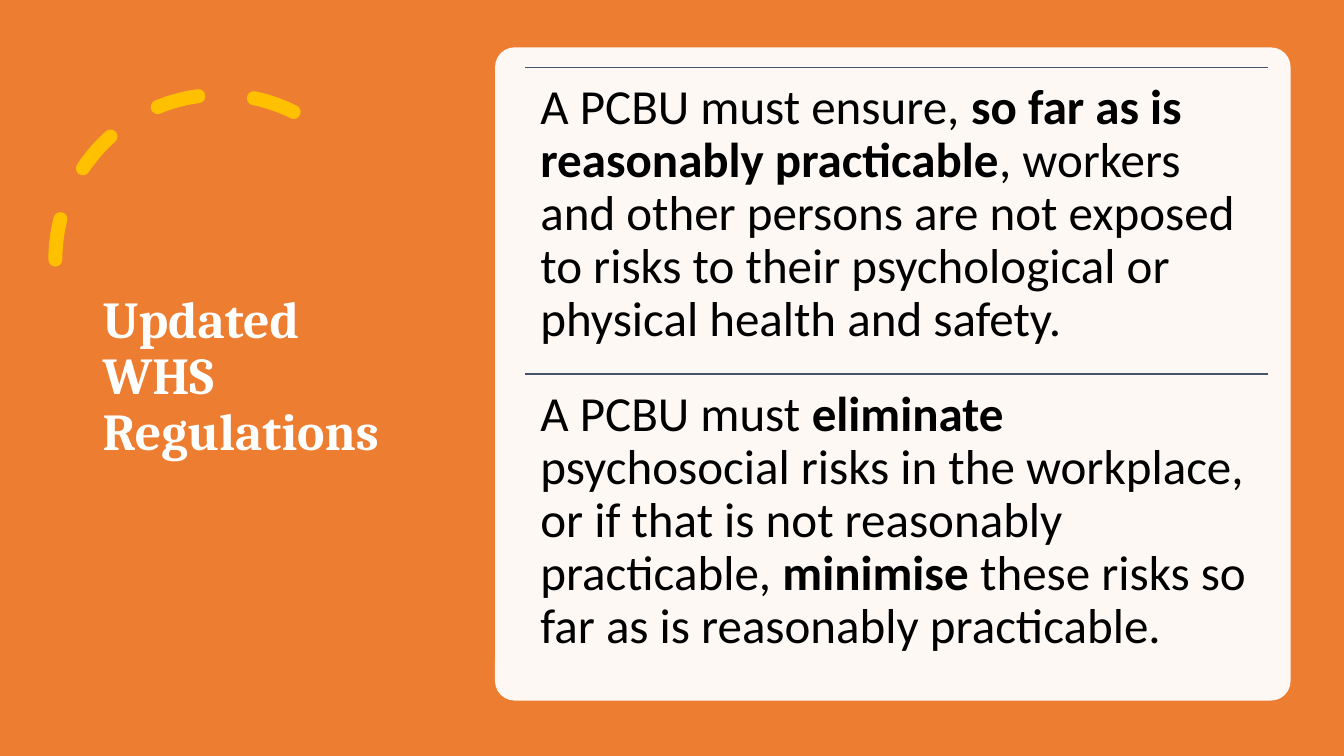
"""Build the slide on updated WHS regulations."""
from dataclasses import dataclass

import pptx
import pptx.dml.color
import pptx.enum.dml
import pptx.enum.shapes
import pptx.enum.text
import pptx.oxml.ns
import pptx.util
from lxml import etree

Inches = pptx.util.Inches
Kind = pptx.enum.shapes.MSO_SHAPE
Anchor = pptx.enum.text.MSO_ANCHOR


@dataclass(frozen=True)
class Theme:
    """Colours, fonts and type sizes."""
    back: str = "ED7D31"
    arc: str = "FFC000"
    white: str = "FFFFFF"
    rule: str = "44546A"
    ink: str = "000000"
    head: str = "Cambria"
    body: str = "Calibri"
    large: int = 37
    text: int = 35


def rgb(code):
    """Turn a hex code into a colour."""
    return pptx.dml.color.RGBColor.from_string(code)


def add(parent, tag, **attrs):
    """Append a drawing element to a parent."""
    return etree.SubElement(parent, pptx.oxml.ns.qn(tag), attrs)


def write(para, text, *, font, size, color, bold=False):
    """Add one formatted run to a paragraph."""
    run = para.add_run()
    run.text = text
    run.font.name = font
    run.font.size = pptx.util.Pt(size)
    run.font.bold = bold
    run.font.color.rgb = rgb(color)


class Deck:
    """Hold the theme and draw on the current slide."""

    def __init__(self, theme):
        """Open a deck with one blank slide."""
        self.theme = theme
        self.file = pptx.Presentation()
        self.file.slide_width = Inches(13.33)
        self.file.slide_height = Inches(7.5)
        self.slide = self.file.slides.add_slide(self.file.slide_layouts[6])

    def shape(self, kind, box, adjust=()):
        """Add a plain preset shape."""
        item = self.slide.shapes.add_shape(kind, *map(Inches, box))
        item.shadow.inherit = False
        for i, value in enumerate(adjust):
            item.adjustments[i] = value
        return item

    def panel(self, kind, box, color, adjust=(), alpha=100):
        """Add a filled shape without an outline."""
        item = self.shape(kind, box, adjust)
        item.fill.solid()
        item.fill.fore_color.rgb = rgb(color)
        item.line.fill.background()
        if alpha < 100:
            tone = item.fill._xPr.find(".//" + pptx.oxml.ns.qn("a:srgbClr"))
            add(tone, "a:alpha", val=str(alpha * 1000))

    def arc(self, box, adjust):
        """Add a mirrored, dashed arc with round ends."""
        item = self.shape(Kind.ARC, box, adjust)
        item.fill.background()
        item.line.color.rgb = rgb(self.theme.arc)
        item.line.width = pptx.util.Pt(10)
        item.line.dash_style = pptx.enum.dml.MSO_LINE.DASH
        item.line._ln.set("cap", "rnd")
        item._element.spPr.xfrm.set("flipH", "1")

    def rule(self, left, top, width):
        """Add a thin level line."""
        ends = map(Inches, (left, top, left + width, top))
        item = self.slide.shapes.add_connector(
            pptx.enum.shapes.MSO_CONNECTOR.STRAIGHT, *ends)
        item.line.color.rgb = rgb(self.theme.rule)
        item.line.width = pptx.util.Pt(1)
        add(item._element.spPr, "a:effectLst")

    def text(self, box, parts, anchor=Anchor.TOP, inset=None, **style):
        """Add a paragraph from (text, bold) parts."""
        frame = self.slide.shapes.add_textbox(*map(Inches, box)).text_frame
        frame.word_wrap = True
        frame.vertical_anchor = anchor
        if inset is not None:
            frame.margin_left = frame.margin_right = Inches(inset)
            frame.margin_top = frame.margin_bottom = Inches(inset)
        para = frame.paragraphs[0]
        para.line_spacing = 0.9
        for words, bold in parts:
            write(para, words, bold=bold, **style)


DUTIES = [
    [("A PCBU must ensure, ", False),
     ("so far as is reasonably practicable", True),
     (", workers and other persons are not exposed to risks to their "
      "psychological or physical health and safety.", False)],
    [("A PCBU must ", False),
     ("eliminate", True),
     (" psychosocial risks in the workplace, or if that is not reasonably "
      "practicable, ", False),
     ("minimise", True),
     (" these risks so far as is reasonably practicable.", False)],
]


def main():
    """Draw the slide and save it."""
    theme = Theme()
    deck = Deck(theme)
    deck.panel(Kind.RECTANGLE, (0, 0, 13.33, 7.5), theme.back)
    deck.arc((0.55, 0.94, 3.27, 3.27), (146.13, 0))
    deck.text((0.92, 0.7, 3.23, 6.09), [("Updated WHS Regulations", True)],
              anchor=Anchor.MIDDLE, font=theme.head, size=theme.large,
              color=theme.white)
    deck.panel(Kind.ROUNDED_RECTANGLE, (4.91, 0.47, 7.89, 6.48), theme.white,
               adjust=(0.03,), alpha=95)
    left, top, width, step = 5.21, 0.67, 7.37, 3.04
    for i, parts in enumerate(DUTIES):
        y = top + i * step
        deck.rule(left, y, width)
        deck.text((left, y, width, step), parts, inset=0.15,
                  font=theme.body, size=theme.text, color=theme.ink)
    deck.file.save("out.pptx")


if __name__ == "__main__":
    main()
